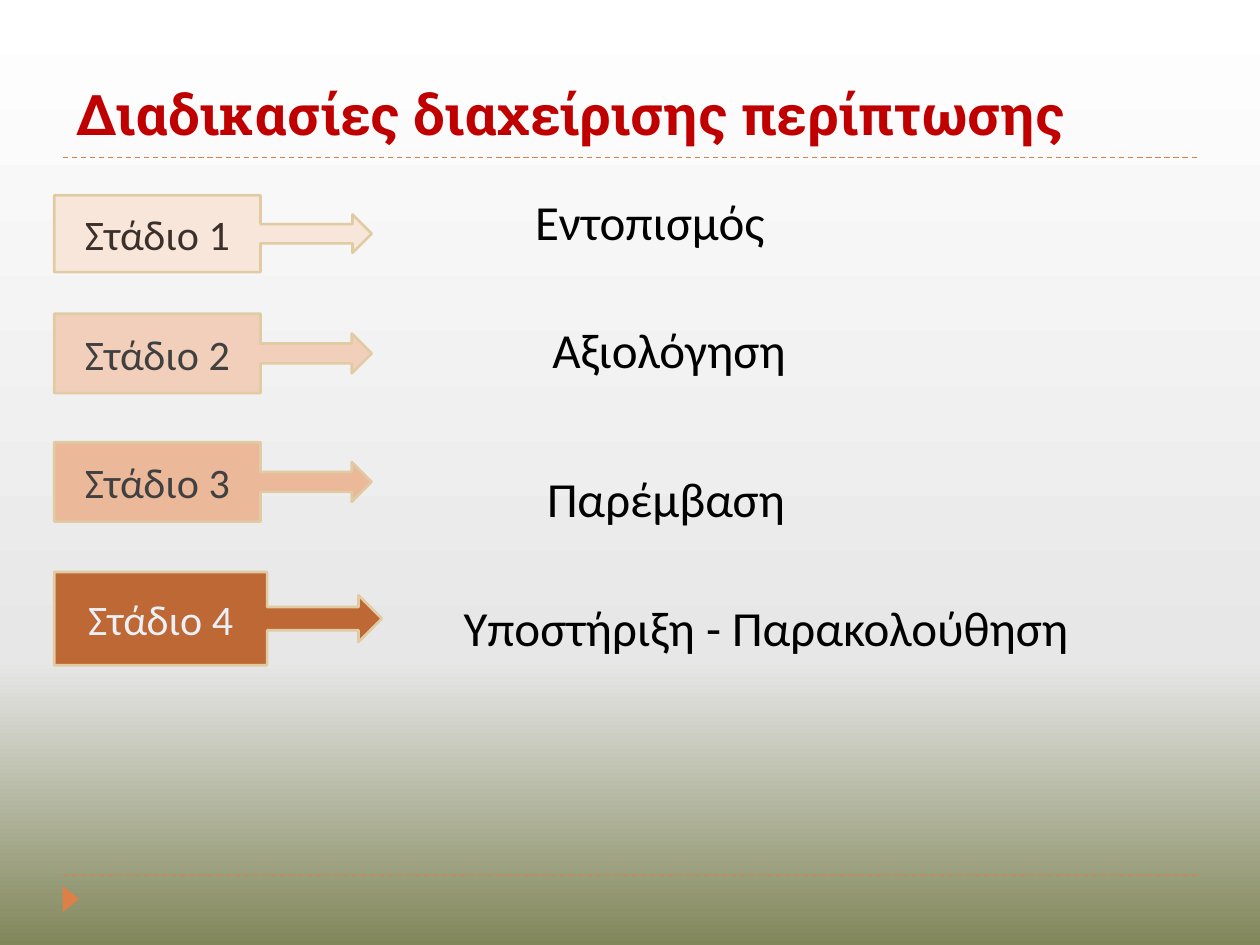
import lxml.etree
import pptx
import pptx.dml.color
import pptx.enum.dml
import pptx.enum.shapes
import pptx.enum.text
import pptx.oxml
import pptx.oxml.ns
import pptx.util

Pt = pptx.util.Pt
qn = pptx.oxml.ns.qn
SHAPES = pptx.enum.shapes.MSO_SHAPE
ANCHOR = pptx.enum.text.MSO_ANCHOR
ALIGN = pptx.enum.text.PP_ALIGN


def color(hex_code):
    return pptx.dml.color.RGBColor.from_string(hex_code)


def write(shape, text, size=28, font="Calibri", ink="000000", bold=False,
          align=ALIGN.LEFT, anchor=ANCHOR.TOP, indent=0):
    frame = shape.text_frame
    frame.word_wrap = True
    frame.vertical_anchor = anchor
    paragraph = frame.paragraphs[0]
    paragraph.alignment = align
    if indent:
        properties = paragraph._p.get_or_add_pPr()
        properties.set("marL", str(Pt(indent)))
        properties.set("indent", "0")
    run = paragraph.add_run()
    run.text = text
    run.font.size = Pt(size)
    run.font.name = font
    run.font.bold = bold
    run.font.color.rgb = color(ink)


presentation = pptx.Presentation()
presentation.slide_width = Pt(720)
presentation.slide_height = Pt(540)
slide = presentation.slides.add_slide(presentation.slide_layouts[6])
shapes = slide.shapes

# Background: olive at the bottom, rising through grey to white
backdrop = slide.background.fill
backdrop.gradient()
backdrop.gradient_angle = 90
stops = slide.background._cSld.find(".//" + qn("a:gsLst"))
for stop in list(stops):
    stops.remove(stop)
for percent, hex_code in [(0, "81875A"), (30, "E7E7E7"), (100, "FFFFFF")]:
    stop = lxml.etree.SubElement(stops, qn("a:gs"), pos=str(percent * 1000))
    lxml.etree.SubElement(stop, qn("a:srgbClr"), val=hex_code)

# Dashed rules and the corner marker
for rule_y in (500.4, 90):
    rule = shapes.add_connector(pptx.enum.shapes.MSO_CONNECTOR.STRAIGHT,
                                Pt(36), Pt(rule_y), Pt(684), Pt(rule_y))
    rule.line.color.rgb = color("DD8047")
    rule.line.width = Pt(0.75)
    rule.line.dash_style = pptx.enum.dml.MSO_LINE.DASH
    lxml.etree.SubElement(rule._element.spPr, qn("a:effectLst"))

marker = shapes.add_shape(SHAPES.ISOSCELES_TRIANGLE, Pt(33), Pt(509), Pt(15), Pt(9.5))
marker.rotation = 90
marker.shadow.inherit = False
marker.fill.solid()
marker.fill.fore_color.rgb = color("DD8047")
marker.line.fill.background()

title = shapes.add_textbox(Pt(36.7), Pt(9.4), Pt(648), Pt(77.8))
write(title, "Διαδικασίες διαχείρισης περίπτωσης", size=32, font="Roboto Slab",
      ink="C00000", bold=True, anchor=ANCHOR.BOTTOM)

# Stage callouts: top, width, height, fill, opacity in percent, text colour
stages = [
    (111.6, 181.4, 43.9, "F8E6DA", 100, "3C302A"),
    (179.3, 181.4, 45.4, "F1CCB5", 90, "404040"),
    (252.7, 181.4, 45.4, "EBB391", 90, "404040"),
    (326.9, 187.2, 53.3, "B95B22", 90, "EAF0F6"),
]
for number, (top, width, height, fill, opacity, ink) in enumerate(stages, 1):
    stage = shapes.add_shape(SHAPES.RIGHT_ARROW_CALLOUT,
                             Pt(31), Pt(top), Pt(width), Pt(height))
    stage.shadow.inherit = False
    stage.fill.solid()
    stage.fill.fore_color.rgb = color(fill)
    if opacity < 100:
        tint = stage._element.spPr.find(qn("a:solidFill")).find(qn("a:srgbClr"))
        lxml.etree.SubElement(tint, qn("a:alpha"), val=str(opacity * 1000))
    stage.line.color.rgb = color("E0CBA3")
    stage.line.width = Pt(1.5)
    write(stage, f"Στάδιο {number}", size=24, ink=ink,
          align=ALIGN.CENTER, anchor=ANCHOR.MIDDLE)

# Activity of each stage: left, top, width, alignment, indent
activities = [
    ("Εντοπισμός", 255, 105.8, 232.6, ALIGN.CENTER, 0),
    ("Αξιολόγηση", 263.5, 179.3, 198.7, ALIGN.LEFT, 45),
    ("Παρέμβαση", 263.5, 264.2, 203.8, ALIGN.LEFT, 42),
    ("Υποστήριξη - Παρακολούθηση", 257.8, 337.7, 368.6, ALIGN.LEFT, 0),
]
for activity, left, top, width, align, indent in activities:
    label = shapes.add_textbox(Pt(left), Pt(top), Pt(width), Pt(41))
    write(label, activity, align=align, indent=indent)

presentation.save("out.pptx")
